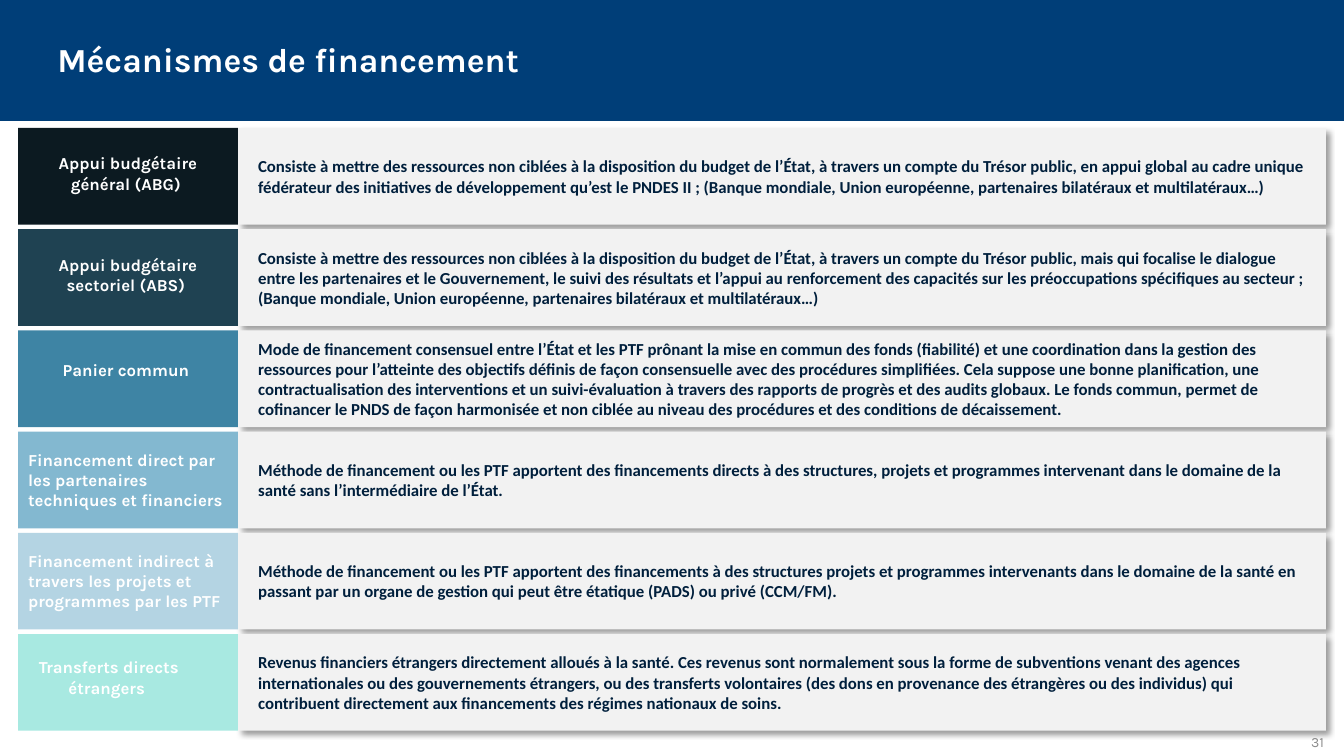
from lxml import etree
from pptx import Presentation, util as u
from pptx.dml.color import RGBColor
from pptx.enum import shapes, text
from pptx.oxml import ns

TITLE = "Mécanismes de financement"
PAGE = "31"
MID = (0.34, 1.86, "CENTER")
WIDE = (0.18, 2.18, "LEFT")
LOW = (0.15, 1.86, "CENTER")
ROWS = [
    ("0C1A21", "Appui budgétaire général (ABG) ", MID, 0.2, 0.5,
     "Consiste à mettre des ressources non ciblées à la disposition du budget de l’État, à travers un compte du Trésor public, en appui global au cadre unique fédérateur des initiatives de développement qu’est le PNDES II ; (Banque mondiale, Union européenne, partenaires bilatéraux et multilatéraux…)"),
    ("1F4252", "Appui budgétaire sectoriel (ABS) ", MID, 0.2, 0.5,
     "Consiste à mettre des ressources non ciblées à la disposition du budget de l’État, à travers un compte du Trésor public, mais qui focalise le dialogue entre les partenaires et le Gouvernement, le suivi des résultats et l’appui au renforcement des capacités sur les préoccupations spécifiques au secteur ; (Banque mondiale, Union européenne, partenaires bilatéraux et multilatéraux…)"),
    ("3E84A4", "Panier commun ", MID, 0.24, 0.3,
     "Mode de financement consensuel entre l’État et les PTF prônant la mise en commun des fonds (fiabilité) et une coordination dans la gestion des ressources pour l’atteinte des objectifs définis de façon consensuelle avec des procédures simplifiées. Cela suppose une bonne planification, une contractualisation des interventions et un suivi-évaluation à travers des rapports de progrès et des audits globaux. Le fonds commun, permet de cofinancer le PNDS de façon harmonisée et non ciblée au niveau des procédures et des conditions de décaissement."),
    ("83B8D0", "Financement direct par les partenaires techniques et financiers", WIDE, 0.12, 0.71,
     "Méthode de financement ou les PTF apportent des financements directs à des structures, projets et programmes intervenant dans le domaine de la santé sans l’intermédiaire de l’État."),
    ("B4D4E3", "Financement indirect à travers les projets et programmes par les PTF", WIDE, 0.12, 0.71,
     "Méthode de financement ou les PTF apportent des financements à des structures projets et programmes intervenants dans le domaine de la santé en passant par un organe de gestion qui peut être étatique (PADS) ou privé (CCM/FM)."),
    ("A8E9E1", "Transferts directs étrangers ", LOW, 0.18, 0.5,
     "Revenus financiers étrangers directement alloués à la santé. Ces revenus sont normalement sous la forme de subventions venant des agences internationales ou des gouvernements étrangers, ou des transferts volontaires (des dons en provenance des étrangères ou des individus) qui contribuent directement aux financements des régimes nationaux de soins."),
]
LEFT, SPLIT, RIGHT = 0.18, 2.36, 13.15
TOP, LAST, HIGH = 1.27, 6.29, 0.96

deck = Presentation()
deck.slide_width, deck.slide_height = u.Inches(13.33), u.Inches(7.5)
slide = deck.slides.add_slide(deck.slide_layouts[6])


def color(code):
    return RGBColor.from_string(code)


def place(*box):
    return [u.Inches(n) for n in box]


def block(box, fill):
    item = slide.shapes.add_shape(shapes.MSO_SHAPE.RECTANGLE, *place(*box))
    item.shadow.inherit = False
    item.fill.solid()
    item.fill.fore_color.rgb = color(fill)
    item.line.fill.background()
    return item


def write(item, words, size, code, font="Karla", bold=True, align="LEFT", anchor="MIDDLE"):
    frame = item.text_frame
    frame.text = words
    frame.word_wrap = True
    frame.vertical_anchor = text.MSO_ANCHOR[anchor]
    para = frame.paragraphs[0]
    para.alignment = text.PP_ALIGN[align]
    face = para.runs[0].font
    face.name, face.size, face.bold = font, u.Pt(size), bold
    face.color.rgb = color(code)
    return frame


def label(box, *args, **style):
    return write(slide.shapes.add_textbox(*place(*box)), *args, **style)


def shade(item):
    effects = item._element.spPr.find(ns.qn("a:effectLst"))
    drop = etree.SubElement(effects, ns.qn("a:outerShdw"), blurRad=str(u.Pt(4)),
                            dist=str(u.Pt(3)), dir=str(45 * 60000), algn="tl", rotWithShape="0")
    tint = etree.SubElement(drop, ns.qn("a:srgbClr"), val="000000")
    etree.SubElement(tint, ns.qn("a:alpha"), val="40000")


def main():
    block((0, 0, 13.33, 1.2), "003E78")
    label((10.23, 7.16, 3, 0.4), PAGE, 10, "8C8C8C", bold=False, align="RIGHT")
    head = label((0.47, 0.26, 12.4, 0.53), TITLE, 24, "FFFFFF", anchor="BOTTOM")
    head.margin_top = head.margin_bottom = 0

    step = (LAST - TOP) / (len(ROWS) - 1)
    for row, (fill, name, (left, wide, align), drop, tall, words) in enumerate(ROWS):
        top = TOP + row * step
        panel = block((SPLIT, top, RIGHT - SPLIT, HIGH), "F2F2F2")
        shade(panel)
        frame = write(panel, words, 12, "001F3C", font="Calibri")
        frame.margin_left = u.Inches(0.2)
        block((LEFT, top, SPLIT - LEFT, HIGH), fill)
        label((left, top + drop, wide, tall), name, 12, "FFFFFF", align=align)

    deck.save("out.pptx")


if __name__ == "__main__":
    main()
